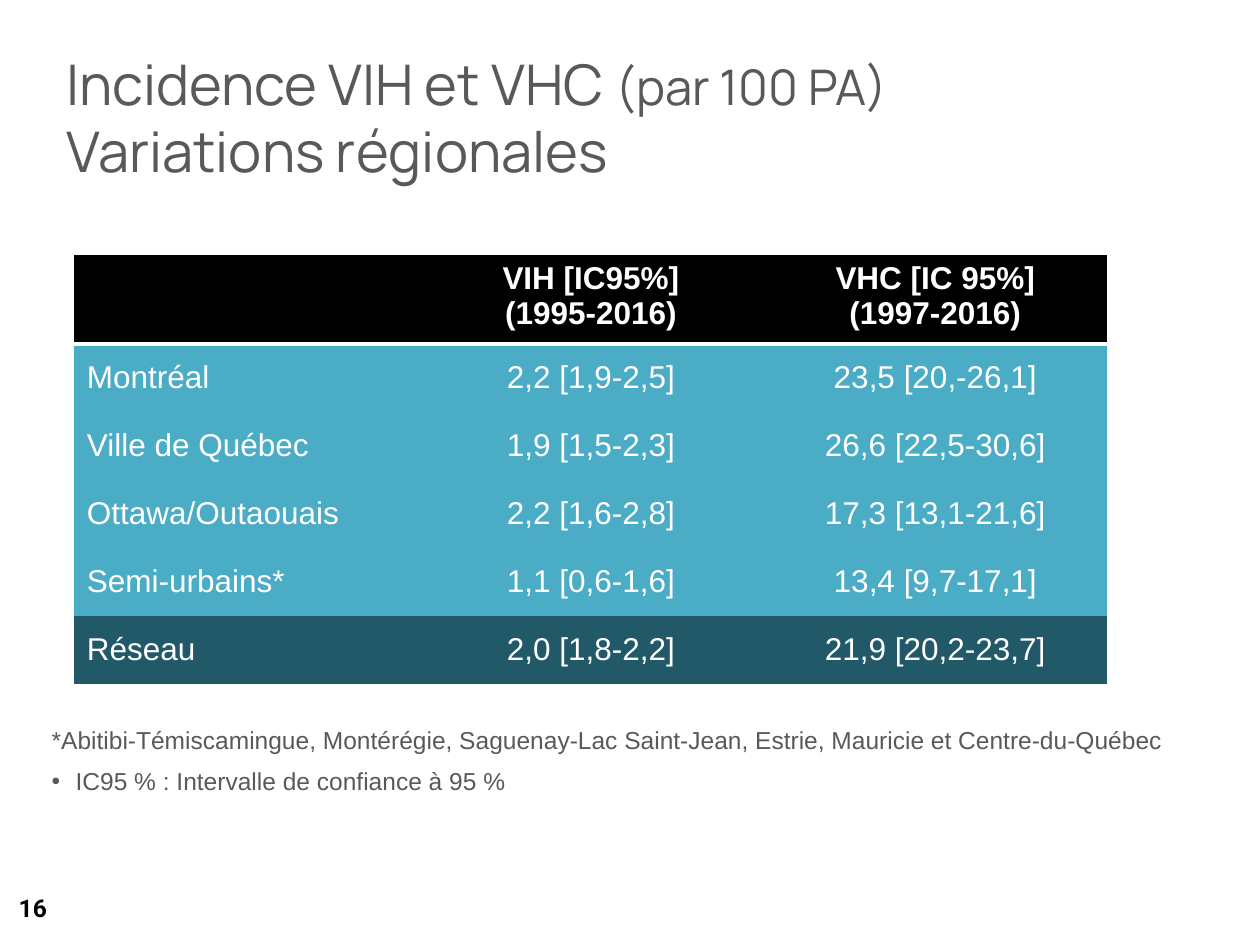
from dataclasses import dataclass

from lxml.etree import SubElement
from pptx import Presentation
from pptx.dml.color import RGBColor as Color
from pptx.enum.text import MSO_ANCHOR as Anchor, MSO_AUTO_SIZE as AutoSize, PP_ALIGN as Align
from pptx.oxml.ns import qn
from pptx.util import Pt

SCALE = 9144
NO_GRID_STYLE = "{2D5ABB26-0587-4C30-8999-92F81FD0307C}"


@dataclass(frozen=True)
class Theme:
    """Colours, fonts and type sizes of the slide."""
    grey: str = "595959"
    black: str = "000000"
    white: str = "FFFFFF"
    region: str = "4BACC6"
    network: str = "215968"
    title_font: str = "Manrope"
    text_font: str = "Arial"
    number_font: str = "Roboto"
    title: int = 32
    unit: int = 28
    cell: int = 18
    note: int = 14


THEME = Theme()
TITLE = [("Incidence VIH et VHC ", THEME.title), ("(par 100 PA)", THEME.unit),
         ("\n", THEME.title), ("Variations régionales", THEME.title)]
HEADER = ["", "VIH [IC95%]\n(1995-2016)", "VHC [IC 95%]\n(1997-2016)"]
RATES = [
    ["Montréal", "2,2 [1,9-2,5]", "23,5 [20,-26,1]"],
    ["Ville de Québec", "1,9 [1,5-2,3]", "26,6 [22,5-30,6]"],
    ["Ottawa/Outaouais", "2,2 [1,6-2,8]", "17,3 [13,1-21,6]"],
    ["Semi-urbains*", "1,1 [0,6-1,6]", "13,4 [9,7-17,1]"],
    ["Réseau", "2,0 [1,8-2,2]", "21,9 [20,2-23,7]"],
]
NOTES = [
    ("*Abitibi-Témiscamingue, Montérégie, Saguenay-Lac Saint-Jean, Estrie, "
     "Mauricie et Centre-du-Québec", None),
    ("IC95 % : Intervalle de confiance à 95 %", "•"),
]


def px(*lengths):
    """Turn px lengths into EMU."""
    return [length * SCALE for length in lengths]


def apply(target, **values):
    """Set each named attribute on the target."""
    for name, value in values.items():
        setattr(target, name, value)


def style(font, name, size, color, bold=False):
    """Give a font its face, size, colour and weight."""
    apply(font, name=name, size=Pt(size), bold=bold)
    font.color.rgb = Color.from_string(color)


def place(shape, box):
    """Move a shape to its box."""
    apply(shape, **dict(zip(("left", "top", "width", "height"), px(*box))))


def add_title(page, box):
    """Fill the title placeholder with spans of two sizes."""
    title = page.shapes.title
    place(title, box)
    frame = title.text_frame
    apply(frame, vertical_anchor=Anchor.MIDDLE, auto_size=AutoSize.NONE, word_wrap=True)
    para = frame.paragraphs[0]
    para.alignment = Align.LEFT
    for text, size in TITLE:
        if text == "\n":
            para.add_line_break()
            continue
        span = para.add_run()
        span.text = text
        style(span.font, THEME.title_font, size, THEME.grey)


def add_notes(page, box):
    """Fill the body placeholder with the table notes."""
    body = page.placeholders[1]
    place(body, box)
    frame = body.text_frame
    apply(frame, auto_size=AutoSize.NONE, word_wrap=True)
    frame.text = "\n".join(text for text, _ in NOTES)
    for index, (para, (_, bullet)) in enumerate(zip(frame.paragraphs, NOTES)):
        props = para._p.get_or_add_pPr()
        apply_indent = {"marL": px(19)[0], "indent": px(-19)[0]}
        for name, value in apply_indent.items():
            props.set(name, str(value))
        if bullet:
            SubElement(props, qn("a:buFont"), typeface=THEME.text_font)
            SubElement(props, qn("a:buChar"), char=bullet)
        else:
            SubElement(props, qn("a:buNone"))
        para.space_before = Pt(7 if index else 0)
        style(para.font, THEME.text_font, THEME.note, THEME.grey)


def add_rule(cell, color, width):
    """Draw a line along the bottom of a cell."""
    props = cell._tc.get_or_add_tcPr()
    line = SubElement(props, qn("a:lnB"), w=str(Pt(width)))
    fill = SubElement(line, qn("a:solidFill"))
    SubElement(fill, qn("a:srgbClr"), val=color)
    props.insert(0, line)


def fill_cell(cell, text, color, centred, header):
    """Write one table cell."""
    cell.text = text
    cell.fill.solid()
    cell.fill.fore_color.rgb = Color.from_string(color)
    cell.vertical_anchor = Anchor.TOP if header else Anchor.MIDDLE
    for para in cell.text_frame.paragraphs:
        para.alignment = Align.CENTER if centred else Align.LEFT
        style(para.font, THEME.text_font, THEME.cell, THEME.white, header)
        for span in para.runs:
            style(span.font, THEME.text_font, THEME.cell, THEME.white, header)
    if header:
        add_rule(cell, THEME.white, 2)


def add_rates(page, box):
    """Add the table of incidence rates by region."""
    rows = [HEADER] + RATES
    colors = [THEME.black] + [THEME.region] * (len(RATES) - 1) + [THEME.network]
    table = page.shapes.add_table(len(rows), len(HEADER), *px(*box)).table
    apply(table, horz_banding=False)
    table._tbl.tblPr.find(qn("a:tableStyleId")).text = NO_GRID_STYLE
    for index, (row, color) in enumerate(zip(rows, colors)):
        table.rows[index].height = px(54 if index else 71)[0]
        for column, text in enumerate(row):
            fill_cell(table.cell(index, column), text, color, column > 0, index == 0)


def add_number(page, box):
    """Add the page number."""
    frame = page.shapes.add_textbox(*px(*box)).text_frame
    frame.word_wrap = True
    para = frame.paragraphs[0]
    para.alignment = Align.RIGHT
    span = para.add_run()
    span.text = "16"
    style(span.font, THEME.number_font, THEME.note, THEME.black, True)


def main():
    """Build the slide and save the deck."""
    deck = Presentation()
    apply(deck, **dict(zip(("slide_width", "slide_height"), px(1000, 750))))
    page = deck.slides.add_slide(deck.slide_layouts[1])
    add_number(page, (-25, 704, 72, 52))
    add_title(page, (43, 30, 806, 125))
    add_notes(page, (31, 570, 918, 69))
    add_rates(page, (59, 202, 820, 341))
    deck.save("out.pptx")


if __name__ == "__main__":
    main()
